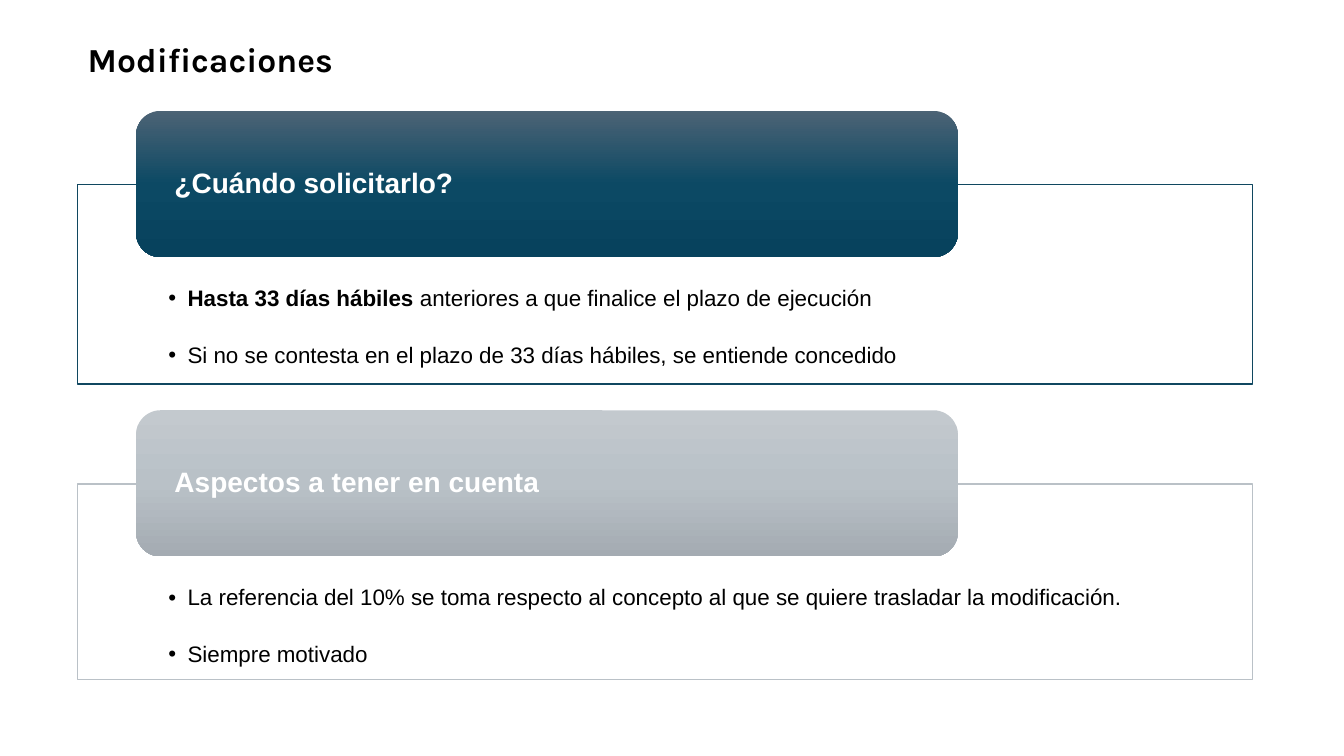
from copy import deepcopy

from pptx import Presentation
from pptx.dml.color import RGBColor
from pptx.enum.shapes import MSO_SHAPE
from pptx.enum.text import MSO_ANCHOR, MSO_AUTO_SIZE, PP_ALIGN
from pptx.oxml.ns import qn
from pptx.oxml.xmlchemy import OxmlElement
from pptx.util import Inches, Pt

ROUNDED = MSO_SHAPE.ROUNDED_RECTANGLE
MIDDLE, TOP = MSO_ANCHOR.MIDDLE, MSO_ANCHOR.TOP
LEFT = PP_ALIGN.LEFT
NO_AUTOFIT = MSO_AUTO_SIZE.NONE

SECTIONS = [
    {
        "top": 1.1,
        "frame_height": 1.98,
        "heading": "¿Cuándo solicitarlo?",
        "line": "104760",
        "gradient": ["4C6375", "0C4964", "07425D"],
        "items": [
            [("Hasta 33 días hábiles ", True),
             ("anteriores a que finalice el plazo de ejecución", False)],
            [("Si no se contesta en el plazo de 33 días hábiles, se entiende concedido", False)],
        ],
    },
    {
        "top": 4.07,
        "frame_height": 1.94,
        "heading": "Aspectos a tener en cuenta",
        "line": "BAC1C7",
        "gradient": ["C3C9CE", "B9C1C7", "A4ABB2"],
        "items": [
            [("La referencia del 10% se toma respecto al concepto al que se quiere "
              "trasladar la modificación.", False)],
            [("Siempre motivado", False)],
        ],
    },
]


def color(hex_string):
    return RGBColor.from_string(hex_string)


def place(shape, left, top, width, height):
    shape.left, shape.top = Inches(left), Inches(top)
    shape.width, shape.height = Inches(width), Inches(height)


def set_font(font, name, size, hex_string, bold=None):
    font.name, font.size, font.bold = name, Pt(size), bold
    font.color.rgb = color(hex_string)


def set_frame(text_frame, anchor, left, top, right, bottom):
    text_frame.word_wrap = True
    text_frame.auto_size = NO_AUTOFIT
    text_frame.vertical_anchor = anchor
    text_frame.margin_left, text_frame.margin_top = Inches(left), Inches(top)
    text_frame.margin_right, text_frame.margin_bottom = Inches(right), Inches(bottom)


def add_bullet(paragraph, indent):
    properties = paragraph._p.get_or_add_pPr()
    properties.set("marL", str(Inches(indent)))
    properties.set("indent", str(-Inches(indent)))
    bullet = OxmlElement("a:buChar")
    bullet.set("char", "•")
    properties.append(bullet)


def fill_gradient(shape, hex_strings):
    shape.fill.gradient()
    shape.fill.gradient_angle = 270
    stop_list = shape._element.spPr.find(".//" + qn("a:gsLst"))
    stop_list.append(deepcopy(stop_list[-1]))
    for stop, position, hex_string in zip(shape.fill.gradient_stops, (0, 0.5, 1), hex_strings):
        stop.position = position
        stop.color.rgb = color(hex_string)


def write_title(title, text):
    place(title, 0.77, 0.34, 5.71, 0.5)
    set_frame(title.text_frame, MIDDLE, 0.1, 0.05, 0.1, 0.05)
    title.text_frame.text = text
    paragraph = title.text_frame.paragraphs[0]
    paragraph.alignment = LEFT
    set_font(paragraph.font, "Karla", 24, "000000", True)


def write_list(body, section):
    place(body, 0.77, section["top"] + 0.73, 11.65, section["frame_height"])
    body.fill.solid()
    body.fill.fore_color.rgb = color("FFFFFF")
    body.line.color.rgb = color(section["line"])
    body.line.width = Pt(1)
    text_frame = body.text_frame
    set_frame(text_frame, TOP, 0.9, 1.02, 0.9, 0.12)
    for index, item in enumerate(section["items"]):
        paragraph = text_frame.add_paragraph() if index else text_frame.paragraphs[0]
        add_bullet(paragraph, 0.19)
        paragraph.line_spacing = 0.9
        paragraph.space_before = Pt(23.4 if index else 0)
        set_font(paragraph.font, "Arial", 16, "000000")
        for text, bold in item:
            run = paragraph.add_run()
            run.text = text
            run.font.bold = bold


def add_heading(slide, section):
    heading = slide.shapes.add_shape(
        ROUNDED, Inches(1.35), Inches(section["top"]), Inches(8.15), Inches(1.45))
    heading.shadow.inherit = False
    fill_gradient(heading, section["gradient"])
    heading.line.fill.background()
    set_frame(heading.text_frame, MIDDLE, 0.31, 0, 0.31, 0)
    heading.text_frame.text = section["heading"]
    paragraph = heading.text_frame.paragraphs[0]
    paragraph.alignment = LEFT
    paragraph.line_spacing = 0.9
    set_font(paragraph.font, "Arial", 20, "FFFFFF", True)


def main():
    presentation = Presentation()
    presentation.slide_width, presentation.slide_height = Inches(13.33), Inches(7.5)
    slide = presentation.slides.add_slide(presentation.slide_layouts.get_by_name("Two Content"))
    write_title(slide.shapes.title, "Modificaciones")
    for index, section in enumerate(SECTIONS, start=1):
        write_list(slide.placeholders[index], section)
        add_heading(slide, section)
    presentation.save("out.pptx")


if __name__ == "__main__":
    main()
